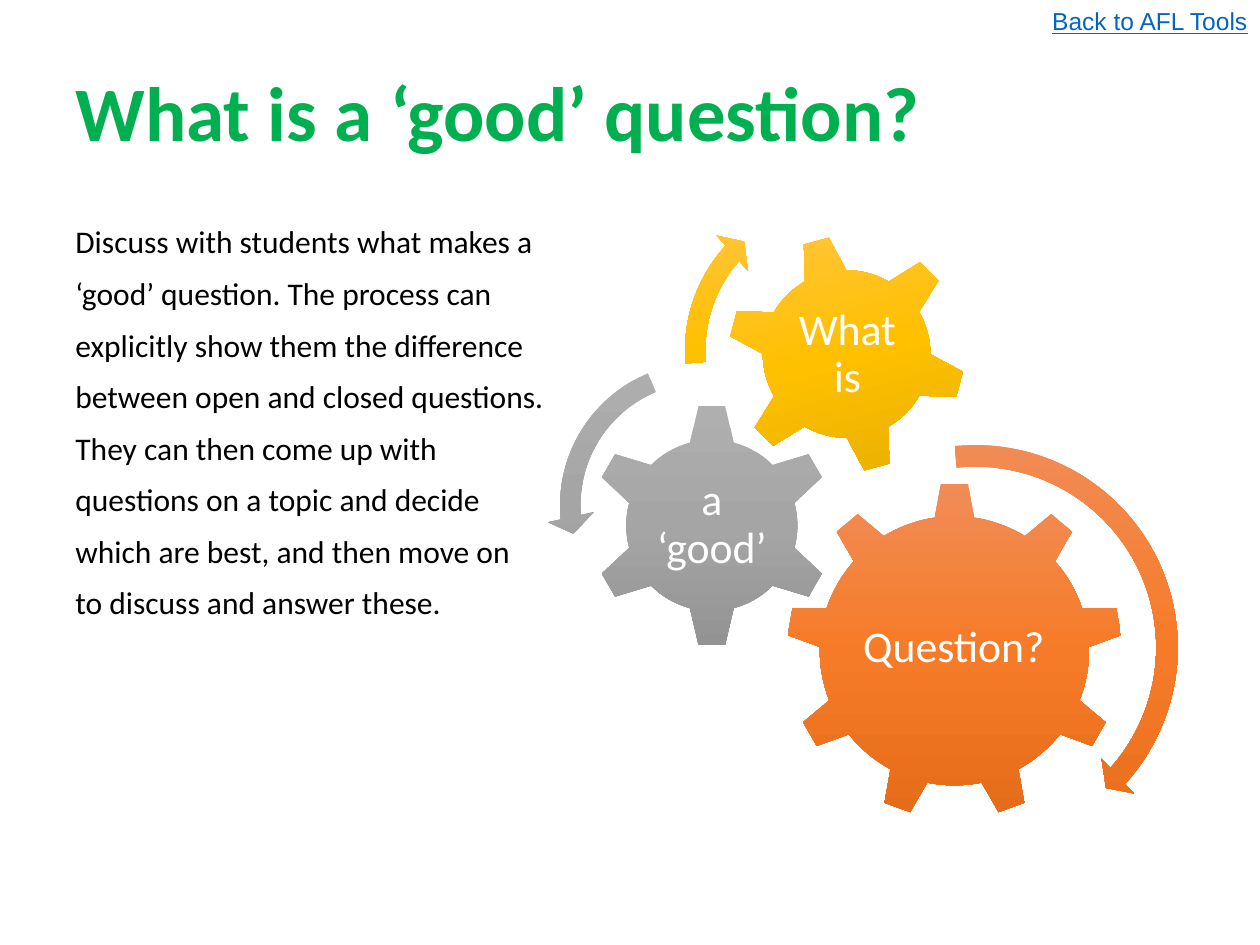
from copy import deepcopy

from pptx import Presentation
from pptx.dml.color import RGBColor
from pptx.enum.shapes import MSO_SHAPE
from pptx.enum.text import MSO_ANCHOR, MSO_AUTO_SIZE, PP_ALIGN
from pptx.oxml.ns import qn
from pptx.util import Inches, Pt

GEAR_SIX, GEAR_NINE = MSO_SHAPE.GEAR_6, MSO_SHAPE.GEAR_9
ARROW, LEFT_ARROW = MSO_SHAPE.CIRCULAR_ARROW, MSO_SHAPE.LEFT_CIRCULAR_ARROW
LEFT, CENTER, RIGHT = PP_ALIGN.LEFT, PP_ALIGN.CENTER, PP_ALIGN.RIGHT
TOP, MIDDLE = MSO_ANCHOR.TOP, MSO_ANCHOR.MIDDLE

THEME = {
    "title": {"font": "Calibri", "size": 44, "color": "00B050", "bold": True},
    "body": {"font": "Calibri", "size": 18, "color": "000000"},
    "link": {"font": "Arial", "size": 14, "color": "0563C1", "underline": True},
    "gear": {"font": "Calibri", "size": 25, "color": "FFFFFF"},
    "orange": ("F18C57", "F67B28", "E56C19"),
    "gray": ("AFAFAF", "A5A5A5", "939393"),
    "gold": ("FFC64B", "FFC000", "E3AB00"),
}

TITLE = "What is a ‘good’ question?"
LINK = "Back to AFL Tools"
BODY_LINES = [
    "Discuss with students what makes a",
    "‘good’ question. The process can",
    "explicitly show them the difference",
    "between open and closed questions.",
    "They can then come up with",
    "questions on a topic and decide",
    "which are best, and then move on",
    "to discuss and answer these.",
]
GEARS = [
    {"text": "Question?", "color": "orange", "kind": GEAR_NINE, "left": 6.24, "top": 3.83,
     "size": 2.67, "rotation": 0, "label": (6.77, 4.46, 1.6, 1.37)},
    {"text": "a ‘good’", "color": "gray", "kind": GEAR_SIX, "left": 4.68, "top": 3.2,
     "size": 1.94, "rotation": 0, "label": (5.17, 3.69, 0.96, 0.96)},
    {"text": "What is", "color": "gold", "kind": GEAR_SIX, "left": 5.77, "top": 1.86,
     "size": 1.9, "rotation": 345, "label": (6.19, 2.28, 1.07, 1.07)},
]
ARROWS = [
    {"color": "orange", "kind": ARROW, "left": 6.03, "top": 3.43, "size": 3.42,
     "adjust": (0.05, 2.99, 25.22, 158.49, 0.055)},
    {"color": "gray", "kind": LEFT_ARROW, "left": 4.34, "top": 2.77, "size": 2.48,
     "adjust": (0.065, 4.3, 104.89, 148.38, 0.075)},
    {"color": "gold", "kind": ARROW, "left": 5.33, "top": 1.44, "size": 2.68,
     "adjust": (0.06, 3.94, 133.14, 105.08, 0.07)},
]


def place(shape, left, top, width, height):
    shape.left, shape.top = Inches(left), Inches(top)
    shape.width, shape.height = Inches(width), Inches(height)


def write(shape, lines, style, align=LEFT, anchor=TOP, spacing=0.9, before=0, hanging=0):
    frame = shape.text_frame
    frame.word_wrap = True
    frame.auto_size = MSO_AUTO_SIZE.NONE
    frame.vertical_anchor = anchor
    for index, line in enumerate(lines):
        paragraph = frame.add_paragraph() if index else frame.paragraphs[0]
        paragraph.alignment = align
        paragraph.line_spacing = spacing
        paragraph.space_before = Pt(before)
        if hanging:
            properties = paragraph._p.get_or_add_pPr()
            properties.set("marL", str(Inches(hanging)))
            properties.set("indent", str(-Inches(hanging)))
        run = paragraph.add_run()
        run.text = line
        look = THEME[style]
        font = run.font
        font.name, font.size = look["font"], Pt(look["size"])
        font.color.rgb = RGBColor.from_string(look["color"])
        font.bold = look.get("bold", False)
        font.underline = look.get("underline", False)


def add_text(shapes, box, lines, style, **options):
    shape = shapes.add_textbox(*map(Inches, box))
    write(shape, lines, style, **options)
    return shape


def add_gradient_shape(shapes, part):
    shape = shapes.add_shape(part["kind"], Inches(part["left"]), Inches(part["top"]),
                             Inches(part["size"]), Inches(part["size"]))
    shape.shadow.inherit = False
    shape.line.fill.background()
    shape.fill.gradient()
    shape.fill.gradient_angle = 270
    stop_list = shape._element.spPr.find(".//" + qn("a:gsLst"))
    stop_list.insert(1, deepcopy(stop_list[0]))
    for index, (stop, color) in enumerate(zip(shape.fill.gradient_stops, THEME[part["color"]])):
        stop.position = index / 2
        stop.color.rgb = RGBColor.from_string(color)
    return shape


def main():
    presentation = Presentation()
    presentation.slide_width, presentation.slide_height = Inches(10), Inches(7.5)
    slide = presentation.slides.add_slide(presentation.slide_layouts[5])

    title = slide.shapes.title
    place(title, 0.5, 0.3, 9, 1.25)
    write(title, [TITLE], "title", anchor=MIDDLE)

    add_text(slide.shapes, (0.5, 1.75, 4.42, 4.95), BODY_LINES, "body", before=10, hanging=0.25)
    add_text(slide.shapes, (7.97, 0, 2.03, 0.34), [LINK], "link", align=RIGHT, spacing=1)

    diagram = slide.shapes.add_group_shape().shapes
    for gear in GEARS:
        add_gradient_shape(diagram, gear).rotation = gear["rotation"]
        label = add_text(diagram, gear["label"], [gear["text"]], "gear",
                         align=CENTER, anchor=MIDDLE)
        frame = label.text_frame
        frame.margin_left = frame.margin_right = Inches(0.03)
        frame.margin_top = frame.margin_bottom = Inches(0.03)
    for arrow in ARROWS:
        shape = add_gradient_shape(diagram, arrow)
        for index, value in enumerate(arrow["adjust"]):
            shape.adjustments[index] = value

    presentation.save("out.pptx")


if __name__ == "__main__":
    main()
